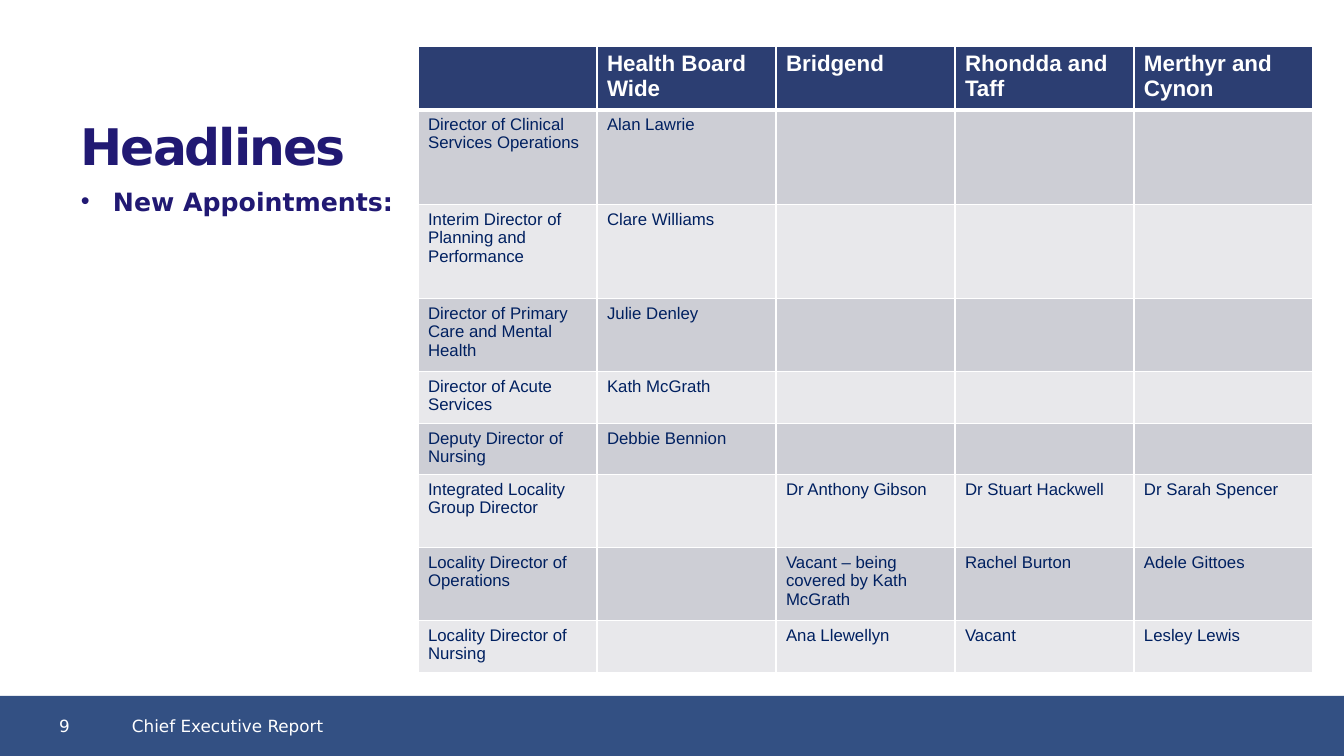
import pptx
import pptx.util
import pptx.dml.color
import pptx.enum.shapes
import pptx.enum.text
import pptx.oxml.ns
import lxml.etree

RGBColor = pptx.dml.color.RGBColor
Pt = pptx.util.Pt
MIDDLE = pptx.enum.text.MSO_ANCHOR.MIDDLE

WHITE = RGBColor(0xFF, 0xFF, 0xFF)
INDIGO = RGBColor(0x21, 0x19, 0x73)
FOOTER_BLUE = RGBColor(0x33, 0x50, 0x83)
HEADER_BLUE = RGBColor(0x2C, 0x3E, 0x72)
CELL_NAVY = RGBColor(0x00, 0x20, 0x60)
BAND_FILLS = [RGBColor(0xCD, 0xCE, 0xD5), RGBColor(0xE8, 0xE8, 0xEB)]

TITLE = "Headlines"
BULLET = "New Appointments:"
PAGE_NUMBER = "9"
FOOTER = "Chief Executive Report"
APPOINTMENTS = [
    ("", "Health Board Wide", "Bridgend", "Rhondda and Taff", "Merthyr and Cynon"),
    ("Director of Clinical Services Operations", "Alan Lawrie", "", "", ""),
    ("Interim Director of Planning and Performance", "Clare Williams", "", "", ""),
    ("Director of Primary Care and Mental Health", "Julie Denley", "", "", ""),
    ("Director of Acute Services", "Kath McGrath", "", "", ""),
    ("Deputy Director of Nursing", "Debbie Bennion", "", "", ""),
    ("Integrated Locality Group Director", "", "Dr Anthony Gibson", "Dr Stuart Hackwell", "Dr Sarah Spencer"),
    ("Locality Director of Operations", "", "Vacant – being covered by Kath McGrath", "Rachel Burton", "Adele Gittoes"),
    ("Locality Director of Nursing", "", "Ana Llewellyn", "Vacant", "Lesley Lewis"),
]
ROW_HEIGHTS = [63, 95, 94, 73, 52, 51, 73, 73, 52]
COLUMN_WIDTH = 179
TABLE_LEFT, TABLE_TOP = 418, 46
SLIDE_WIDTH, SLIDE_HEIGHT = 1344, 756
FOOTER_TOP, FOOTER_HEIGHT = 696, 60

TITLE_FORMAT = {"name": "DejaVu Sans", "size": Pt(36), "bold": True, "color": INDIGO}
BULLET_FORMAT = {**TITLE_FORMAT, "size": Pt(18)}
FOOTER_FORMAT = {"name": "DejaVu Sans", "size": Pt(12), "bold": False, "color": WHITE}
HEADER_FORMAT = {"name": "Arial", "size": Pt(16), "bold": True, "color": WHITE}
CELL_FORMAT = {"name": "Arial", "size": Pt(12), "bold": False, "color": CELL_NAVY}


def px(length):
    return pptx.util.Emu(round(length * 914400 / 100.8))


def add_xml(parent, tag, **attributes):
    return lxml.etree.SubElement(parent, pptx.oxml.ns.qn(tag), attributes)


def write(text_frame, text, text_format):
    paragraph = text_frame.paragraphs[0]
    paragraph.alignment = pptx.enum.text.PP_ALIGN.LEFT
    run = paragraph.add_run()
    run.text = text
    for name, value in text_format.items():
        if name == "color":
            run.font.color.rgb = value
        else:
            setattr(run.font, name, value)
    return paragraph


def fit_frame(text_frame, anchor, right=0):
    settings = {"word_wrap": True, "vertical_anchor": anchor, "margin_left": 0,
                "margin_top": 0, "margin_right": px(right), "margin_bottom": 0}
    for name, value in settings.items():
        setattr(text_frame, name, value)


def add_text(slide, box, text, text_format, anchor=pptx.enum.text.MSO_ANCHOR.TOP):
    shape = slide.shapes.add_textbox(*map(px, box))
    fit_frame(shape.text_frame, anchor)
    return write(shape.text_frame, text, text_format)


def add_borders(cell, bottom_width):
    properties = cell._tc.get_or_add_tcPr()
    widths = {"a:lnL": 1, "a:lnR": 1, "a:lnT": 1, "a:lnB": bottom_width}
    for tag, width in widths.items():
        line = add_xml(properties, tag, w=str(Pt(width)))
        add_xml(add_xml(line, "a:solidFill"), "a:srgbClr", val=str(WHITE))


def add_appointments(slide):
    column_count = len(APPOINTMENTS[0])
    table = slide.shapes.add_table(
        len(APPOINTMENTS), column_count, px(TABLE_LEFT), px(TABLE_TOP),
        px(COLUMN_WIDTH * column_count), px(sum(ROW_HEIGHTS))).table
    for column in table.columns:
        column.width = px(COLUMN_WIDTH)
    for row_index, names in enumerate(APPOINTMENTS):
        table.rows[row_index].height = px(ROW_HEIGHTS[row_index])
        is_header = row_index == 0
        for column_index, name in enumerate(names):
            cell = table.cell(row_index, column_index)
            add_borders(cell, 3 if is_header else 1)
            cell.fill.solid()
            cell.fill.fore_color.rgb = HEADER_BLUE if is_header else BAND_FILLS[(row_index - 1) % 2]
            if name:
                write(cell.text_frame, name, HEADER_FORMAT if is_header else CELL_FORMAT)


def add_footer(slide):
    bar = slide.shapes.add_shape(
        pptx.enum.shapes.MSO_SHAPE.RECTANGLE,
        *map(px, (0, FOOTER_TOP, SLIDE_WIDTH, FOOTER_HEIGHT)))
    bar.shadow.inherit = False
    bar.fill.solid()
    bar.fill.fore_color.rgb = FOOTER_BLUE
    bar.line.fill.background()
    fit_frame(bar.text_frame, MIDDLE, right=10)
    paragraph = write(bar.text_frame, PAGE_NUMBER, FOOTER_FORMAT)
    paragraph._p.get_or_add_pPr().set("marL", str(px(59)))
    add_text(slide, (132, FOOTER_TOP, 1132, FOOTER_HEIGHT), FOOTER, FOOTER_FORMAT, MIDDLE)


def main():
    presentation = pptx.Presentation()
    presentation.slide_width = px(SLIDE_WIDTH)
    presentation.slide_height = px(SLIDE_HEIGHT)
    slide = presentation.slides.add_slide(presentation.slide_layouts[6])

    title = add_text(slide, (81, 115, 1180, 72), TITLE, TITLE_FORMAT)
    title.runs[0]._r.get_or_add_rPr().set("spc", "-150")

    bullet = add_text(slide, (81, 186, 502, 448), BULLET, BULLET_FORMAT)
    properties = bullet._p.get_or_add_pPr()
    properties.set("marL", str(px(32)))
    properties.set("indent", str(-px(32)))
    add_xml(properties, "a:buFont", typeface="Arial")
    add_xml(properties, "a:buChar", char="•")

    add_footer(slide)
    add_appointments(slide)
    presentation.save("out.pptx")


if __name__ == "__main__":
    main()
